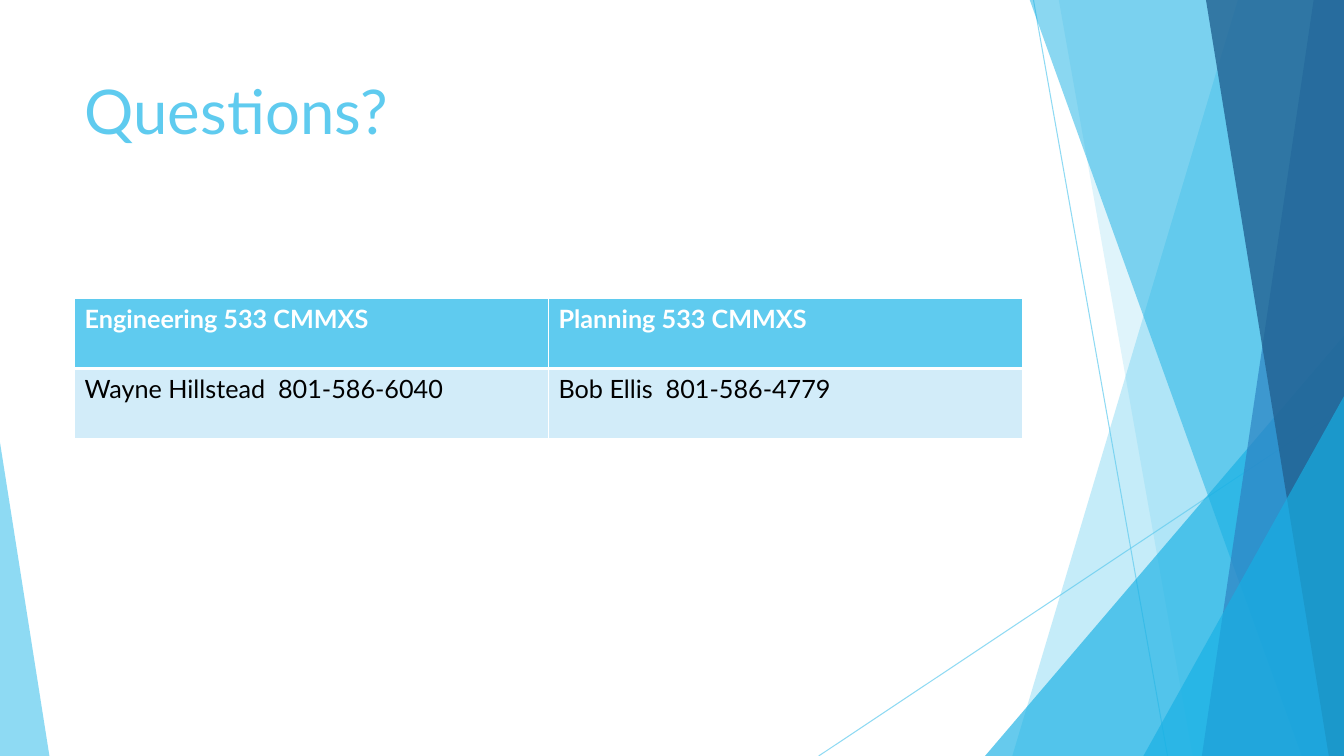
from dataclasses import dataclass

from lxml.etree import SubElement
from pptx import Presentation
from pptx.dml.color import RGBColor
from pptx.enum.shapes import MSO_CONNECTOR, MSO_SHAPE
from pptx.enum.text import MSO_ANCHOR, PP_ALIGN
from pptx.oxml import parse_xml
from pptx.oxml.ns import nsdecls, qn
from pptx.util import Inches, Pt

WIDTH, HEIGHT = 13.33, 7.5
BAND_TOP = -0.01
FONT = "Lato"
SKY, CYAN, BLUE, NAVY = "5FCBEF", "17B0E4", "2E83C3", "226292"
WHITE, BLACK, PALE = "FFFFFF", "000000", "D2ECF9"


@dataclass
class Ray:
    start: tuple[float, float]
    end: tuple[float, float]


@dataclass
class Band:
    """Area from a slanted left edge to the right side of the slide."""
    top_x: float
    bottom_x: float
    color: str
    opacity: int


@dataclass
class Corner:
    """Right triangle standing on the bottom of the slide."""
    left: float
    top: float
    width: float
    apex: float
    color: str
    opacity: int


@dataclass
class RowStyle:
    fill: str
    text: str
    bold: bool
    bottom_border: float


RAYS = [Ray((10.25, 0), (11.58, HEIGHT)), Ray((WIDTH, 4.03), (8.12, HEIGHT))]
FACETS = [
    Band(12.28, 10.04, SKY, 36),
    Band(10.5, 11.83, SKY, 20),
    Corner(9.77, 3.33, 3.56, 1, CYAN, 66),
    Band(10.21, 12.91, CYAN, 50),
    Band(13.03, 11.92, BLUE, 70),
    Band(11.96, 13.18, NAVY, 80),
    Corner(11.34, 3.93, 1.99, 1, CYAN, 66),
    Corner(0, 4.39, 0.49, 0, SKY, 70),
]
CONTACTS = [
    ("Engineering 533 CMMXS", "Planning 533 CMMXS"),
    ("Wayne Hillstead  801-586-6040", "Bob Ellis  801-586-4779"),
]
ROW_STYLES = [RowStyle(SKY, WHITE, True, 3), RowStyle(PALE, BLACK, False, 1)]


def rgb(color: str) -> RGBColor:
    return RGBColor.from_string(color)


def set_opacity(shape, percent: int) -> None:
    for color in shape._element.spPr.iter(qn("a:srgbClr")):
        SubElement(color, qn("a:alpha"), val=str(percent * 1000))


def set_font(paragraph, size: float, color: str, bold: bool = False) -> None:
    font = paragraph.font
    font.name, font.size, font.bold = FONT, Pt(size), bold
    font.color.rgb = rgb(color)


def draw_ray(slide, ray: Ray) -> None:
    points = [Inches(value) for value in (*ray.start, *ray.end)]
    connector = slide.shapes.add_connector(MSO_CONNECTOR.STRAIGHT, *points)
    connector.line.color.rgb = rgb(SKY)
    connector.line.width = Pt(0.75)
    SubElement(connector._element.spPr, qn("a:effectLst"))
    set_opacity(connector, 70)


def draw_facet(slide, facet: Band | Corner) -> None:
    if isinstance(facet, Band):
        corners = [(facet.top_x, BAND_TOP), (WIDTH, BAND_TOP),
                   (WIDTH, HEIGHT), (facet.bottom_x, HEIGHT)]
        points = [(Inches(x), Inches(y)) for x, y in corners]
        builder = slide.shapes.build_freeform(*points[0])
        builder.add_line_segments(points[1:], close=True)
        shape = builder.convert_to_shape()
    else:
        shape = slide.shapes.add_shape(
            MSO_SHAPE.ISOSCELES_TRIANGLE, Inches(facet.left), Inches(facet.top),
            Inches(facet.width), Inches(HEIGHT - facet.top))
        shape.adjustments[0] = facet.apex
    shape.shadow.inherit = False
    shape.line.fill.background()
    shape.fill.solid()
    shape.fill.fore_color.rgb = rgb(facet.color)
    set_opacity(shape, facet.opacity)


def set_borders(cell, bottom: float) -> None:
    sides = {"lnL": 1, "lnR": 1, "lnT": 1, "lnB": bottom}
    properties = cell._tc.get_or_add_tcPr()
    for position, (side, width) in enumerate(sides.items()):
        properties.insert(position, parse_xml(
            f'<a:{side} {nsdecls("a")} w="{Pt(width)}"><a:solidFill>'
            f'<a:srgbClr val="{WHITE}"/></a:solidFill></a:{side}>'))


def add_title(slide, text: str) -> None:
    title = slide.shapes.title
    title.left, title.top = Inches(0.74), Inches(0.67)
    title.width, title.height = Inches(9.4), Inches(1.44)
    title.text_frame.text = text
    title.text_frame.vertical_anchor = MSO_ANCHOR.TOP
    paragraph = title.text_frame.paragraphs[0]
    paragraph.alignment = PP_ALIGN.LEFT
    set_font(paragraph, 44, SKY)


def add_contacts(slide) -> None:
    table = slide.shapes.add_table(
        len(CONTACTS), len(CONTACTS[0]), Inches(0.74), Inches(2.96),
        Inches(9.4), Inches(1.39)).table
    for row, texts, style in zip(table.rows, CONTACTS, ROW_STYLES):
        for cell, text in zip(row.cells, texts):
            cell.text = text
            set_font(cell.text_frame.paragraphs[0], 18, style.text, style.bold)
            cell.fill.solid()
            cell.fill.fore_color.rgb = rgb(style.fill)
            set_borders(cell, style.bottom_border)


def main() -> None:
    presentation = Presentation()
    presentation.slide_width = Inches(WIDTH)
    presentation.slide_height = Inches(HEIGHT)
    slide = presentation.slides.add_slide(presentation.slide_layouts[5])

    # Background decoration
    for ray in RAYS:
        draw_ray(slide, ray)
    for facet in FACETS:
        draw_facet(slide, facet)

    # Content
    add_title(slide, "Questions?")
    add_contacts(slide)
    presentation.save("out.pptx")


if __name__ == "__main__":
    main()
